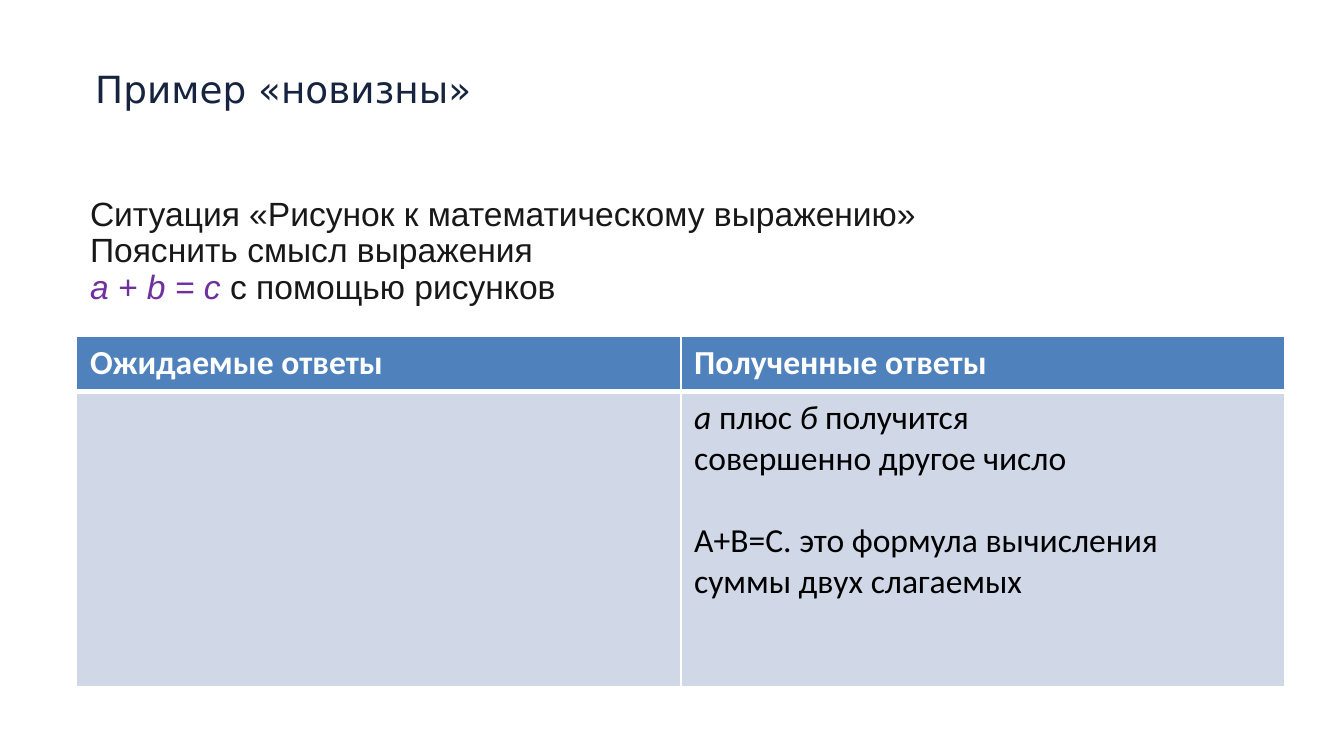
from lxml.etree import SubElement
from pptx import Presentation
from pptx.dml.color import RGBColor
from pptx.oxml.ns import qn
from pptx.util import Inches, Pt

WIDE = 10
HIGH = WIDE * 9 / 16
SANS = dict(size=20, name="DejaVu Sans", color="172440")
BODY = dict(size=18, name="Arial", color="181818")
MATH = dict(BODY, color="7030A0", italic=True)
HEAD = dict(size=18, name="Calibri", color="FFFFFF", bold=True)
CELL = dict(size=18, name="Calibri", color="000000")
VAR = dict(CELL, italic=True)

TITLE = [[("Пример «новизны»", SANS)]]
TASK = [[
    ("Ситуация «Рисунок к математическому выражению»\nПояснить смысл выражения\n", BODY),
    ("a + b = c ", MATH),
    ("с помощью рисунков", BODY),
]]
ANSWERS = [
    [("а ", VAR), ("плюс ", CELL), ("б ", VAR),
     ("получится\nсовершенно другое число", CELL)],
    [("А+В=С. это формула вычисления\nсуммы двух слагаемых", CELL)],
]
GRID = [
    [[[("Ожидаемые ответы", HEAD)]], [[("Полученные ответы", HEAD)]]],
    [[], ANSWERS],
]
FILLS = ["4F81BD", "D0D8E8"]
ROWS = [0.41, 2.2]
EDGES = [dict(L=1, R=1, T=1, B=3), dict(L=1, R=1, T=3, B=1)]
BOXES = [
    (TITLE, (0.61, 0.44, 6.39, 0.8), 0.1, 1),
    (TASK, (0.62, 1.42, 8.57, 1.48), 0.05, 0.9),
]
TABLE = (0.57, 2.5, 8.99, sum(ROWS))


def paint(hue):
    return RGBColor.from_string(hue)


def style(font, form):
    for key, value in form.items():
        if key == "color":
            font.color.rgb = paint(value)
        else:
            setattr(font, key, Pt(value) if key == "size" else value)


def write(frame, paras, lead=1, gap=0):
    for i, runs in enumerate(paras):
        para = frame.add_paragraph() if i else frame.paragraphs[0]
        para.line_spacing = lead
        para.space_before = Pt(gap if i else 0)
        for text, form in runs:
            for j, line in enumerate(text.split("\n")):
                if j:
                    para.add_line_break()
                if line:
                    run = para.add_run()
                    run.text = line
                    style(run.font, form)


def border(cell, edges):
    props = cell._tc.get_or_add_tcPr()
    for side, width in edges.items():
        line = SubElement(props, qn(f"a:ln{side}"), w=str(Pt(width)))
        fill = SubElement(line, qn("a:solidFill"))
        SubElement(fill, qn("a:srgbClr"), val="FFFFFF")


def main():
    deck = Presentation()
    deck.slide_width, deck.slide_height = Inches(WIDE), Inches(HIGH)
    slide = deck.slides.add_slide(deck.slide_layouts[6])

    for paras, place, inset, lead in BOXES:
        frame = slide.shapes.add_textbox(*map(Inches, place)).text_frame
        frame.word_wrap = True
        frame.margin_left = frame.margin_right = Inches(inset)
        write(frame, paras, lead)

    count = len(GRID[0])
    table = slide.shapes.add_table(len(GRID), count, *map(Inches, TABLE)).table
    for column in table.columns:
        column.width = Inches(TABLE[2] / count)
    for r, row in enumerate(GRID):
        table.rows[r].height = Inches(ROWS[r])
        for c, paras in enumerate(row):
            cell = table.cell(r, c)
            border(cell, EDGES[r])
            cell.fill.solid()
            cell.fill.fore_color.rgb = paint(FILLS[r])
            write(cell.text_frame, paras, gap=22)

    deck.save("out.pptx")


if __name__ == "__main__":
    main()
